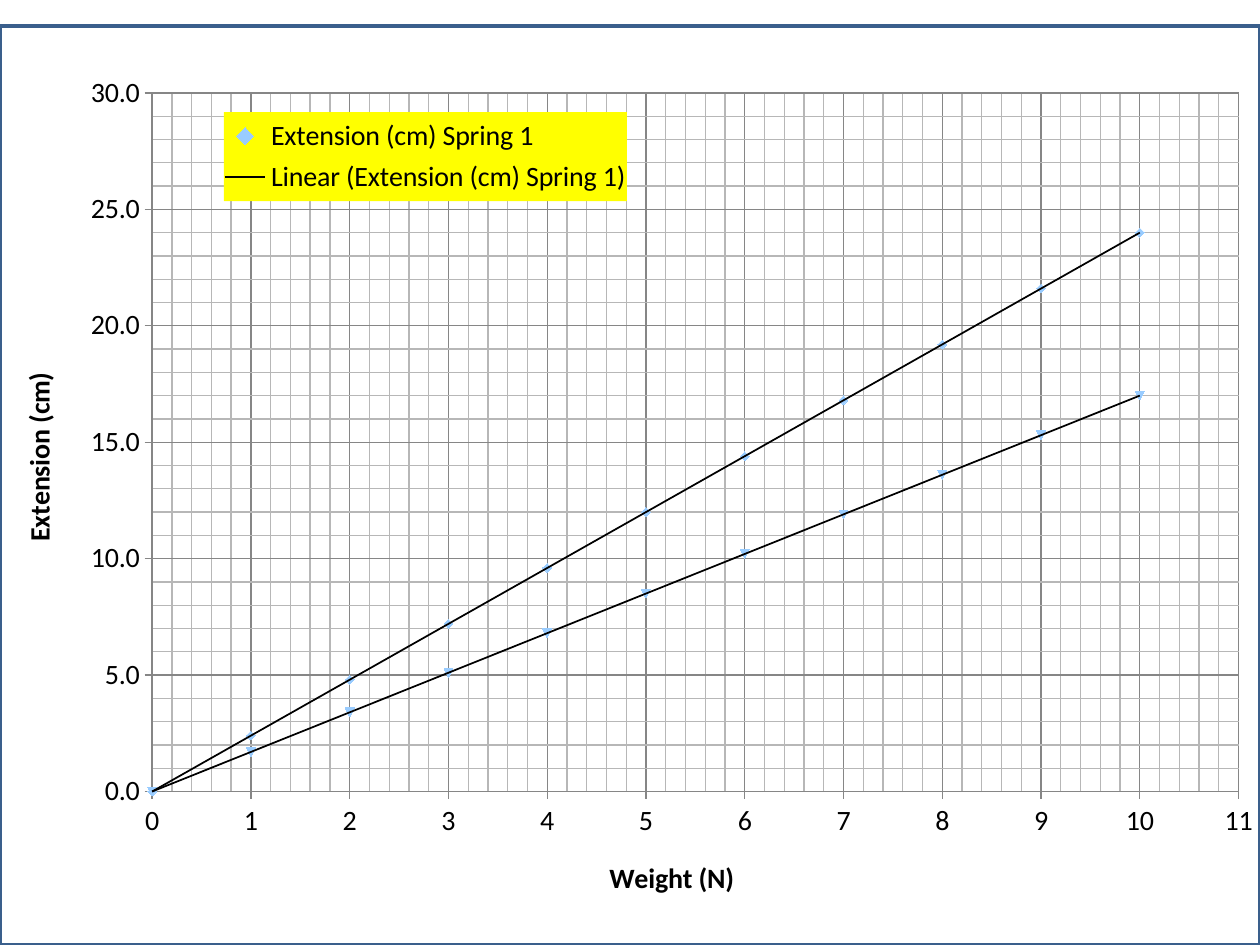
from dataclasses import dataclass

from lxml import etree
from pptx import Presentation
from pptx.chart.data import XyChartData
from pptx.dml.color import RGBColor as Rgb
from pptx.enum.chart import XL_CHART_TYPE as ChartType
from pptx.enum.chart import XL_LEGEND_POSITION as LegendPosition
from pptx.enum.chart import XL_MARKER_STYLE as Marker
from pptx.enum.chart import XL_TICK_MARK as Tick
from pptx.enum.shapes import MSO_SHAPE as Preset
from pptx.oxml import parse_xml
from pptx.oxml.ns import nsdecls, qn
from pptx.util import Cm, Pt


@dataclass(frozen=True)
class Theme:
    font: str = "Calibri"
    text_size: int = 16
    text: str = "000000"
    paper: str = "FFFFFF"
    frame: str = "3A5F8C"
    axis: str = "868686"
    minor_grid: str = "B7B7B7"
    marker: str = "99CCFF"
    trend: str = "000000"
    legend: str = "FFFF00"


WEIGHTS = range(11)
SPRINGS = [
    # name, extension per newton, marker
    ("Extension (cm) Spring 1", 2.4, Marker.DIAMOND),
    ("Extension (cm) Spring 2", 1.7, Marker.AUTOMATIC),
]
WEIGHT_AXIS = {"minimum_scale": 0, "maximum_scale": 11, "major_unit": 1, "minor_unit": 0.2}
EXTENSION_AXIS = {"minimum_scale": 0, "maximum_scale": 30, "major_unit": 5, "minor_unit": 1}
AXIS_STYLE = {
    "has_major_gridlines": True,
    "has_minor_gridlines": True,
    "major_tick_mark": Tick.OUTSIDE,
    "minor_tick_mark": Tick.NONE,
}
PLOT_AREA = (0.107, 0.031, 0.847, 0.834)
LEGEND_AREA = (0.163, 0.054, 0.314, 0.106)
HIDDEN_ENTRIES = (1, 3)  # second spring and its trend line


def set_values(target, values):
    for name, value in values.items():
        setattr(target, name, value)


def manual_layout(area, inner=False):
    target = '<c:layoutTarget val="inner"/>' if inner else ""
    modes = '<c:xMode val="edge"/><c:yMode val="edge"/>'
    sides = "".join(f'<c:{side} val="{value}"/>' for side, value in zip("xywh", area))
    return parse_xml(f'<c:layout {nsdecls("c")}><c:manualLayout>{target}{modes}{sides}'
                     '</c:manualLayout></c:layout>')


def solid_fill(color):
    return f'<a:solidFill><a:srgbClr val="{color}"/></a:solidFill>'


def chart_format(content):
    return parse_xml(f'<c:spPr {nsdecls("c", "a")}>{content}</c:spPr>')


def line_format(color, width):
    return chart_format(f'<a:ln w="{Pt(width)}">{solid_fill(color)}</a:ln>')


class SlideBuilder:
    def __init__(self, slide, theme):
        self.slide = slide
        self.theme = theme

    def style_font(self, font, bold=False):
        set_values(font, {"name": self.theme.font, "size": Pt(self.theme.text_size), "bold": bold})
        font.color.rgb = Rgb.from_string(self.theme.text)

    def style_line(self, line, color, width):
        line.color.rgb = Rgb.from_string(color)
        line.width = Pt(width)

    def frame(self, left, top, width, height):
        border = self.slide.shapes.add_shape(Preset.RECTANGLE, left, top, width, height)
        border.shadow.inherit = False
        border.fill.solid()
        border.fill.fore_color.rgb = Rgb.from_string(self.theme.paper)
        self.style_line(border.line, self.theme.frame, 2)

    def scatter(self, left, top, width, height):
        data = XyChartData()
        for name, stretch, _ in SPRINGS:
            spring = data.add_series(name)
            for weight in WEIGHTS:
                spring.add_data_point(weight, round(stretch * weight, 1))
        chart = self.slide.shapes.add_chart(
            ChartType.XY_SCATTER, left, top, width, height, data).chart
        chart.has_title = False
        self.style_font(chart.font)
        chart.plots[0].vary_by_categories = False
        for spring, (_, _, symbol) in zip(chart.plots[0].series, SPRINGS):
            self.spring(spring, symbol)
        self.axis(chart.category_axis, "Weight (N)", "0", WEIGHT_AXIS)
        self.axis(chart.value_axis, "Extension (cm)", "0.0", EXTENSION_AXIS)
        plot_area = chart.plots[0]._element.getparent()
        for layout in plot_area.findall(qn("c:layout")):
            plot_area.remove(layout)
        plot_area.insert(0, manual_layout(PLOT_AREA, inner=True))
        self.legend(chart)

    def spring(self, series, symbol):
        """Show the points as markers with a linear trend line."""
        series.smooth = False
        series.format.line.fill.background()
        set_values(series.marker, {"style": symbol, "size": 5})
        series.marker.format.fill.solid()
        series.marker.format.fill.fore_color.rgb = Rgb.from_string(self.theme.marker)
        series.marker.format.line.fill.background()
        trend = parse_xml(
            f'<c:trendline {nsdecls("c")}><c:trendlineType val="linear"/>'
            '<c:dispRSqr val="0"/><c:dispEq val="0"/></c:trendline>')
        trend.insert(0, line_format(self.theme.trend, 1))
        series._element.find(qn("c:xVal")).addprevious(trend)

    def axis(self, axis, title, number_format, scale):
        set_values(axis, {**AXIS_STYLE, **scale})
        set_values(axis.tick_labels, {"number_format": number_format,
                                      "number_format_is_linked": False})
        self.style_font(axis.tick_labels.font)
        self.style_line(axis.format.line, self.theme.axis, 0.75)
        self.style_line(axis.major_gridlines.format.line, self.theme.axis, 0.75)
        minor_grid = axis._element.find(qn("c:minorGridlines"))
        minor_grid.append(line_format(self.theme.minor_grid, 0.75))
        axis.axis_title.text_frame.text = title
        self.style_font(axis.axis_title.text_frame.paragraphs[0].runs[0].font, bold=True)

    def legend(self, chart):
        chart.has_legend = True
        legend = chart.legend
        set_values(legend, {"position": LegendPosition.RIGHT, "include_in_layout": False})
        self.style_font(legend.font)
        box = legend._element
        for layout in box.findall(qn("c:layout")):
            box.remove(layout)
        overlay = box.find(qn("c:overlay"))
        for index in HIDDEN_ENTRIES:
            entry = etree.Element(qn("c:legendEntry"))
            etree.SubElement(entry, qn("c:idx")).set("val", str(index))
            etree.SubElement(entry, qn("c:delete")).set("val", "1")
            overlay.addprevious(entry)
        overlay.addprevious(manual_layout(LEGEND_AREA))
        overlay.addnext(chart_format(solid_fill(self.theme.legend)))


def main():
    deck = Presentation()
    set_values(deck, {"slide_width": Cm(25.4), "slide_height": Cm(19.05)})
    builder = SlideBuilder(deck.slides.add_slide(deck.slide_layouts[6]), Theme())
    builder.frame(Cm(0), Cm(0.53), Cm(25.4), Cm(18.52))
    builder.scatter(Cm(0.3), Cm(1.35), Cm(25.86), Cm(16.89))
    deck.save("out.pptx")


if __name__ == "__main__":
    main()
